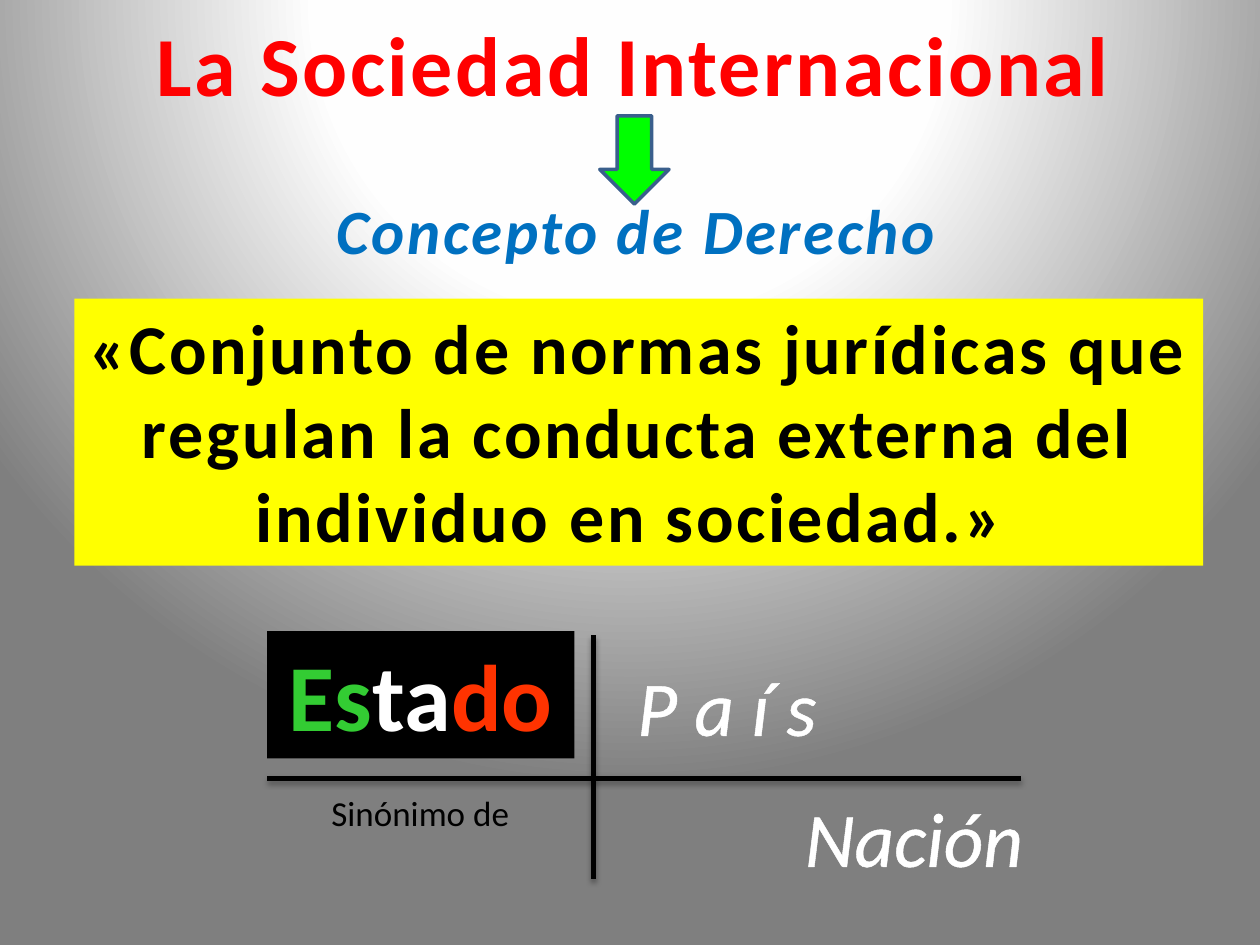
import dataclasses
import typing

import lxml.etree
import pptx
import pptx.dml.color
import pptx.enum.shapes
import pptx.enum.text
import pptx.oxml
import pptx.oxml.ns
import pptx.util

RGB = pptx.dml.color.RGBColor
RED = RGB(0xFF, 0x00, 0x00)
BLUE = RGB(0x00, 0x70, 0xC0)
LIME = RGB(0x00, 0xFF, 0x00)
NAVY = RGB(0x3A, 0x5F, 0x8C)
GOLD = RGB(0xFF, 0xFF, 0x00)
BLACK = RGB(0x00, 0x00, 0x00)
WHITE = RGB(0xFF, 0xFF, 0xFF)
GREEN = RGB(0x33, 0xCC, 0x33)
CORAL = RGB(0xFF, 0x33, 0x00)
PEARL = RGB(0xFE, 0xFE, 0xFE)
GREY = RGB(0x7F, 0x7F, 0x7F)

# The slide is a grid of 100 columns by 75 rows
COLS, ROWS = 100, 75
WIDE, HIGH = pptx.util.Inches(10), pptx.util.Inches(7.5)
FONT = "Calibri"
NS = pptx.oxml.ns.nsdecls("a", "p")


class Area(typing.NamedTuple):
    col: float
    row: float
    cols: float
    rows: float


class Run(typing.NamedTuple):
    text: str
    color: RGB


@dataclasses.dataclass
class Label:
    area: Area
    runs: list[Run]
    size: float
    bold: bool = False
    slant: bool = False
    space: float = 0
    edge: float = 0
    fill: RGB | None = None
    wrap: bool = False


def col_x(col: float) -> int:
    return round(WIDE * col / COLS)


def row_y(row: float) -> int:
    return round(HIGH * row / ROWS)


def place(area: Area) -> tuple[int, int, int, int]:
    return col_x(area.col), row_y(area.row), col_x(area.cols), row_y(area.rows)


def add_label(shapes: typing.Any, label: Label) -> None:
    if label.fill is None:
        box = shapes.add_textbox(*place(label.area))
    else:
        box = shapes.add_shape(pptx.enum.shapes.MSO_SHAPE.RECTANGLE, *place(label.area))
        box.shadow.inherit = False
        box.fill.solid()
        box.fill.fore_color.rgb = label.fill
        box.line.fill.background()
    frame = box.text_frame
    frame.word_wrap = label.wrap
    frame.auto_size = pptx.enum.text.MSO_AUTO_SIZE.SHAPE_TO_FIT_TEXT
    frame.vertical_anchor = pptx.enum.text.MSO_ANCHOR.TOP
    para = frame.paragraphs[0]
    para.alignment = pptx.enum.text.PP_ALIGN.CENTER
    for text, color in label.runs:
        run = para.add_run()
        run.text = text
        font = run.font
        font.name, font.size = FONT, pptx.util.Pt(label.size)
        font.bold, font.italic = label.bold, label.slant
        font.color.rgb = color
        props = run._r.get_or_add_rPr()
        if label.space:
            props.set("spc", str(round(label.space * 100)))
        if label.edge:
            props.insert(0, pptx.oxml.parse_xml(
                f'<a:ln {NS} w="{pptx.util.Pt(label.edge)}"><a:solidFill>'
                f'<a:srgbClr val="{color}"/></a:solidFill></a:ln>'))


def add_line(shapes: typing.Any, start: tuple[float, float], end: tuple[float, float]) -> None:
    line = shapes.add_connector(
        pptx.enum.shapes.MSO_CONNECTOR.STRAIGHT,
        col_x(start[0]), row_y(start[1]), col_x(end[0]), row_y(end[1]))
    line.line.color.rgb = BLACK
    line.line.width = pptx.util.Pt(3)
    glow = lxml.etree.SubElement(line._element.spPr, pptx.oxml.ns.qn("a:effectLst"))
    glow.append(pptx.oxml.parse_xml(
        f'<a:outerShdw {NS} blurRad="{pptx.util.Pt(3.1)}" dist="{pptx.util.Pt(1.8)}" '
        f'dir="5400000" rotWithShape="0"><a:srgbClr val="{BLACK}">'
        '<a:alpha val="35000"/></a:srgbClr></a:outerShdw>'))


def add_arrow(shapes: typing.Any, area: Area) -> None:
    arrow = shapes.add_shape(pptx.enum.shapes.MSO_SHAPE.DOWN_ARROW, *place(area))
    arrow.shadow.inherit = False
    arrow.fill.solid()
    arrow.fill.fore_color.rgb = LIME
    arrow.line.color.rgb = NAVY
    arrow.line.width = pptx.util.Pt(2)


def paint_back(slide: typing.Any) -> None:
    stops = "".join(
        f'<a:gs pos="{share * 1000}"><a:srgbClr val="{color}"/></a:gs>'
        for share, color in ((0, WHITE), (40, PEARL), (100, GREY)))
    slide.element.cSld.insert(0, pptx.oxml.parse_xml(
        f'<p:bg {NS}><p:bgPr><a:gradFill rotWithShape="1"><a:gsLst>{stops}</a:gsLst>'
        '<a:path path="circle"><a:fillToRect l="50000" t="-80000" r="50000" b="180000"/>'
        '</a:path></a:gradFill><a:effectLst/></p:bgPr></p:bg>'))


HEADS = [
    Label(Area(10.1, 0.5, 80.4, 9.1), [Run("La Sociedad Internacional", RED)],
          48, bold=True, space=1.5),
    Label(Area(25.4, 14.7, 50.2, 7.1), [Run("Concepto de Derecho", BLUE)],
          36, bold=True, slant=True, space=1.5),
]
QUOTE = Label(
    Area(5.9, 23.7, 89.6, 21.2),
    [Run("«Conjunto de normas jurídicas que regulan la conducta externa "
         "del individuo en sociedad.» ", BLACK)],
    40, bold=True, space=1.5, fill=GOLD, wrap=True)
TERMS = [
    Label(Area(21.2, 50.1, 24.4, 10.1),
          [Run("Es", GREEN), Run("ta", WHITE), Run("do", CORAL)],
          54, bold=True, fill=BLACK, wrap=True),
    Label(Area(23.9, 62.3, 18.9, 4.4), [Run("Sinónimo de", BLACK)], 20, wrap=True),
    Label(Area(49.5, 51.8, 16.4, 8.4), [Run("P a í s", WHITE)], 44, slant=True, edge=1.45),
    Label(Area(62.8, 62.2, 19.5, 8.4), [Run("Nación", WHITE)], 44, slant=True, edge=1.45),
]


def main() -> None:
    deck = pptx.Presentation()
    deck.slide_width, deck.slide_height = WIDE, HIGH
    slide = deck.slides.add_slide(deck.slide_layouts[6])
    paint_back(slide)

    # Title, concept and definition
    for head in HEADS:
        add_label(slide.shapes, head)
    add_arrow(slide.shapes, Area(47.6, 9.2, 5.5, 7))
    add_label(slide.shapes, QUOTE)

    # Cross with the synonyms of the state
    cross = slide.shapes.add_group_shape().shapes
    add_line(cross, (47.1, 50.4), (47.1, 69.8))
    add_line(cross, (81, 61.8), (21.2, 61.8))
    for term in TERMS:
        add_label(cross, term)

    deck.save("out.pptx")


if __name__ == "__main__":
    main()
